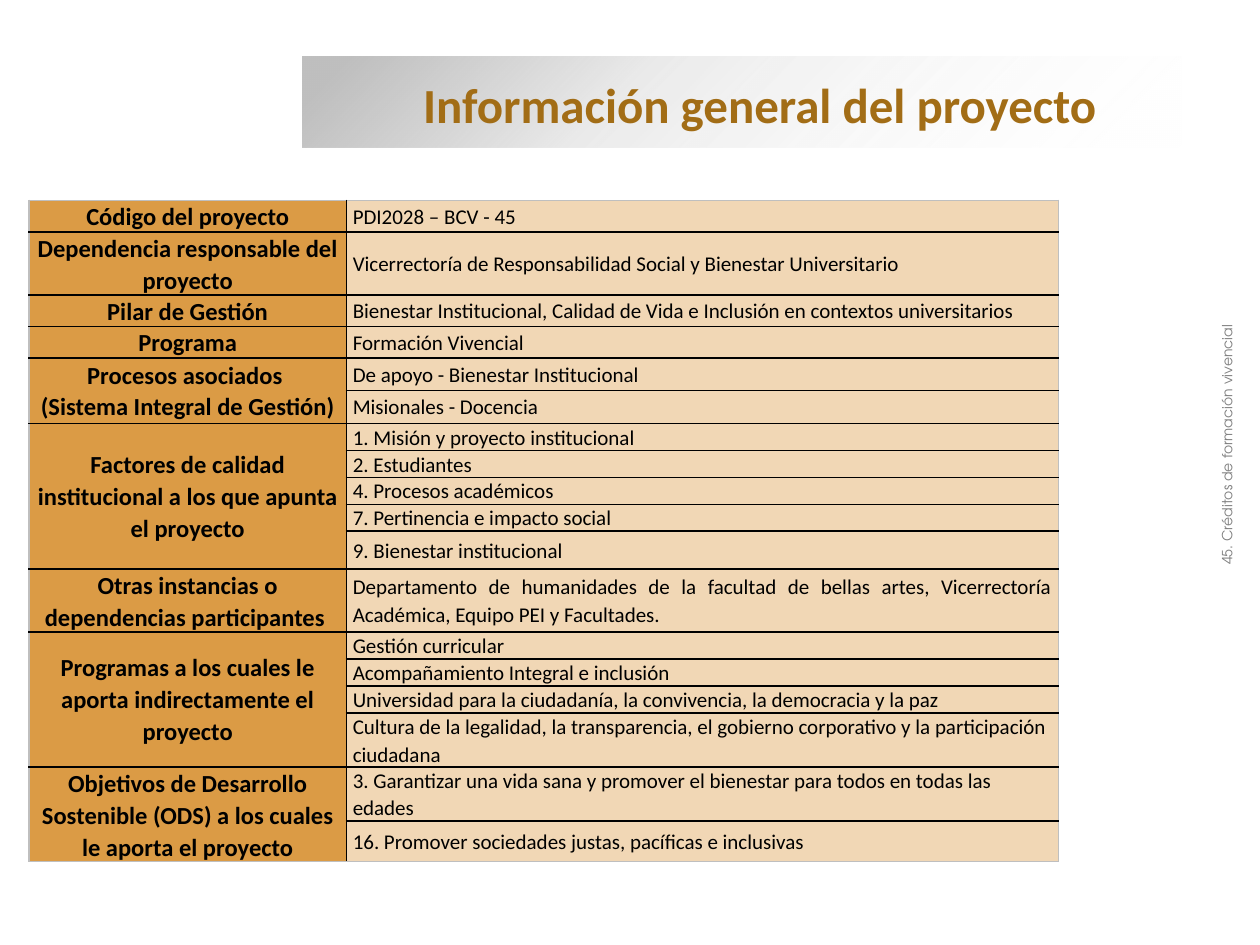
from pptx import Presentation
from pptx import util as u
from pptx.dml.color import RGBColor
from pptx.enum import shapes, text
from pptx.oxml import parse_xml
from pptx.oxml.ns import nsdecls, qn

INK, GOLD, SAND, EDGE, WHITE = "000000", "DB9B45", "F1D7B5", "BFBFBF", "FFFFFF"
LEFT, CENTER, JUST = text.PP_ALIGN.LEFT, text.PP_ALIGN.CENTER, text.PP_ALIGN.JUSTIFY
TOP, MIDDLE = text.MSO_ANCHOR.TOP, text.MSO_ANCHOR.MIDDLE

# Each group: label, then its rows as (text, height, alignment, points after)
GROUPS = [
    ("Código del proyecto", [("PDI2028 – BCV - 45", 0.2, LEFT, 0)]),
    ("Dependencia responsable del proyecto", [
        ("Vicerrectoría de Responsabilidad Social y Bienestar Universitario", 0.39, LEFT, 0)]),
    ("Pilar de Gestión", [
        ("Bienestar Institucional, Calidad de Vida e Inclusión en contextos universitarios",
         0.2, LEFT, 0)]),
    ("Programa", [("Formación Vivencial", 0.2, JUST, 0)]),
    ("Procesos asociados \v(Sistema Integral de Gestión)", [
        ("De apoyo - Bienestar Institucional", 0.26, LEFT, 0),
        ("Misionales - Docencia", 0.26, LEFT, 0)]),
    ("Factores de calidad institucional a los que apunta el proyecto", [
        ("1. Misión y proyecto institucional", 0.15, LEFT, 0),
        ("2. Estudiantes", 0.15, LEFT, 0),
        ("4. Procesos académicos", 0.15, LEFT, 0),
        ("7. Pertinencia e impacto social", 0.15, LEFT, 0),
        ("9. Bienestar institucional", 0.3, LEFT, 0)]),
    ("Otras instancias o dependencias participantes ", [
        ("Departamento de humanidades de la facultad de bellas artes, "
         "Vicerrectoría Académica, Equipo PEI y Facultades.", 0.42, JUST, 0)]),
    ("Programas a los cuales le aporta indirectamente el proyecto", [
        ("Gestión curricular", 0.15, LEFT, 0),
        ("Acompañamiento Integral e inclusión", 0.15, LEFT, 8),
        ("Universidad para la ciudadanía, la convivencia, la democracia y la paz",
         0.15, LEFT, 8),
        ("Cultura de la legalidad, la transparencia, el gobierno corporativo "
         "y la participación ciudadana", 0.15, LEFT, 8)]),
    ("Objetivos de Desarrollo Sostenible (ODS) a los cuales le aporta el proyecto", [
        ("3. Garantizar una vida sana y promover el bienestar para todos en todas las edades",
         0.39, LEFT, 0),
        ("16. Promover sociedades justas, pacíficas e inclusivas", 0.28, LEFT, 0)]),
]


def color(code):
    return RGBColor.from_string(code)


def style(par, size, face, code, bold=False, align=LEFT):
    par.alignment = align
    font = par.font
    font.size, font.name, font.bold = u.Pt(size), face, bold
    font.color.rgb = color(code)


def add_band(slide, box, stops, angle):
    """Draw a rectangle whose stops are (percent, colour, opacity)."""
    band = slide.shapes.add_shape(shapes.MSO_SHAPE.RECTANGLE, *map(u.Inches, box))
    band.shadow.inherit = False
    band.line.fill.background()
    marks = "".join(
        f'<a:gs pos="{pos * 1000}"><a:srgbClr val="{code}">'
        f'<a:alpha val="{alpha * 1000}"/></a:srgbClr></a:gs>'
        for pos, code, alpha in stops)
    grad = parse_xml(
        f'<a:gradFill {nsdecls("a")} rotWithShape="1"><a:gsLst>{marks}</a:gsLst>'
        f'<a:lin ang="{angle * 60000}" scaled="0"/></a:gradFill>')
    # The fill must stand before the outline
    band._element.spPr.find(qn("a:ln")).addprevious(grad)


def add_label(slide, box, words, turn=0, anchor=TOP, **look):
    label = slide.shapes.add_textbox(*map(u.Inches, box))
    label.rotation = turn
    frame = label.text_frame
    frame.word_wrap = True
    frame.auto_size = text.MSO_AUTO_SIZE.SHAPE_TO_FIT_TEXT
    frame.vertical_anchor = anchor
    frame.text = words
    style(frame.paragraphs[0], **look)


def set_edges(cell, left, right, top, bottom):
    props = cell._tc.get_or_add_tcPr()
    for spot, (side, code) in enumerate(zip("LRTB", (left, right, top, bottom))):
        props.insert(spot, parse_xml(
            f'<a:ln{side} {nsdecls("a")} w="12700"><a:solidFill>'
            f'<a:srgbClr val="{code}"/></a:solidFill></a:ln{side}>'))


def paint(cell, shade, *edges):
    cell.fill.solid()
    cell.fill.fore_color.rgb = color(shade)
    set_edges(cell, *edges)


def write(cell, words, pad, size, bold, align, after=0):
    cell.margin_left = cell.margin_right = u.Inches(pad)
    cell.margin_top = cell.margin_bottom = 0
    cell.vertical_anchor = MIDDLE
    cell.text = words
    par = cell.text_frame.paragraphs[0]
    par.line_spacing = 1.07
    par.space_after = u.Pt(after)
    style(par, size, "Calibri", INK, bold, align)


def add_grid(slide, box, widths, groups):
    """Draw a table with grey outer borders and black inner ones."""
    count = sum(len(rows) for _, rows in groups)
    grid = slide.shapes.add_table(count, 2, *map(u.Inches, box)).table
    grid.first_row = grid.horz_banding = False
    for col, wide in zip(grid.columns, widths):
        col.width = u.Inches(wide)

    first = 0
    for name, rows in groups:
        end = first + len(rows) - 1
        base = EDGE if end == count - 1 else INK
        for r, (words, high, align, after) in enumerate(rows, first):
            grid.rows[r].height = u.Inches(high)
            roof = INK if r else EDGE
            label, value = grid.cell(r, 0), grid.cell(r, 1)
            paint(label, GOLD, EDGE, INK, roof, base)
            paint(value, SAND, INK, EDGE, roof, base if r == end else INK)
            write(value, words, 0.05, 12, False, align, after)

        # The label spans all rows of its group
        head = grid.cell(first, 0)
        if end > first:
            head.merge(grid.cell(end, 0))
        write(head, name, 0.04, 14, True, CENTER)
        first = end + 1


def main():
    deck = Presentation()
    deck.slide_width, deck.slide_height = u.Inches(10), u.Inches(7.5)
    slide = deck.slides.add_slide(deck.slide_layouts[6])

    # Title on its fading band
    add_band(slide, (2.4, 0.45, 6.98, 0.72),
             [(5, EDGE, 100), (37, EDGE, 31), (100, WHITE, 0)], 45)
    add_label(slide, (3.26, 0.54, 6.2, 0.57), "Información general del proyecto",
              anchor=MIDDLE, size=28, face="Calibri", code="A26D16", bold=True)

    # Side note, read upwards
    add_label(slide, (7.32, 3.41, 4.84, 0.24), "45. Créditos de formación vivencial",
              turn=270, size=8, face="TeX Gyre Adventor", code="808080", align=CENTER)

    # Project data
    add_grid(slide, (0.23, 1.59, 8.17, 4.1), (2.52, 5.65), GROUPS)
    deck.save("out.pptx")


if __name__ == "__main__":
    main()
